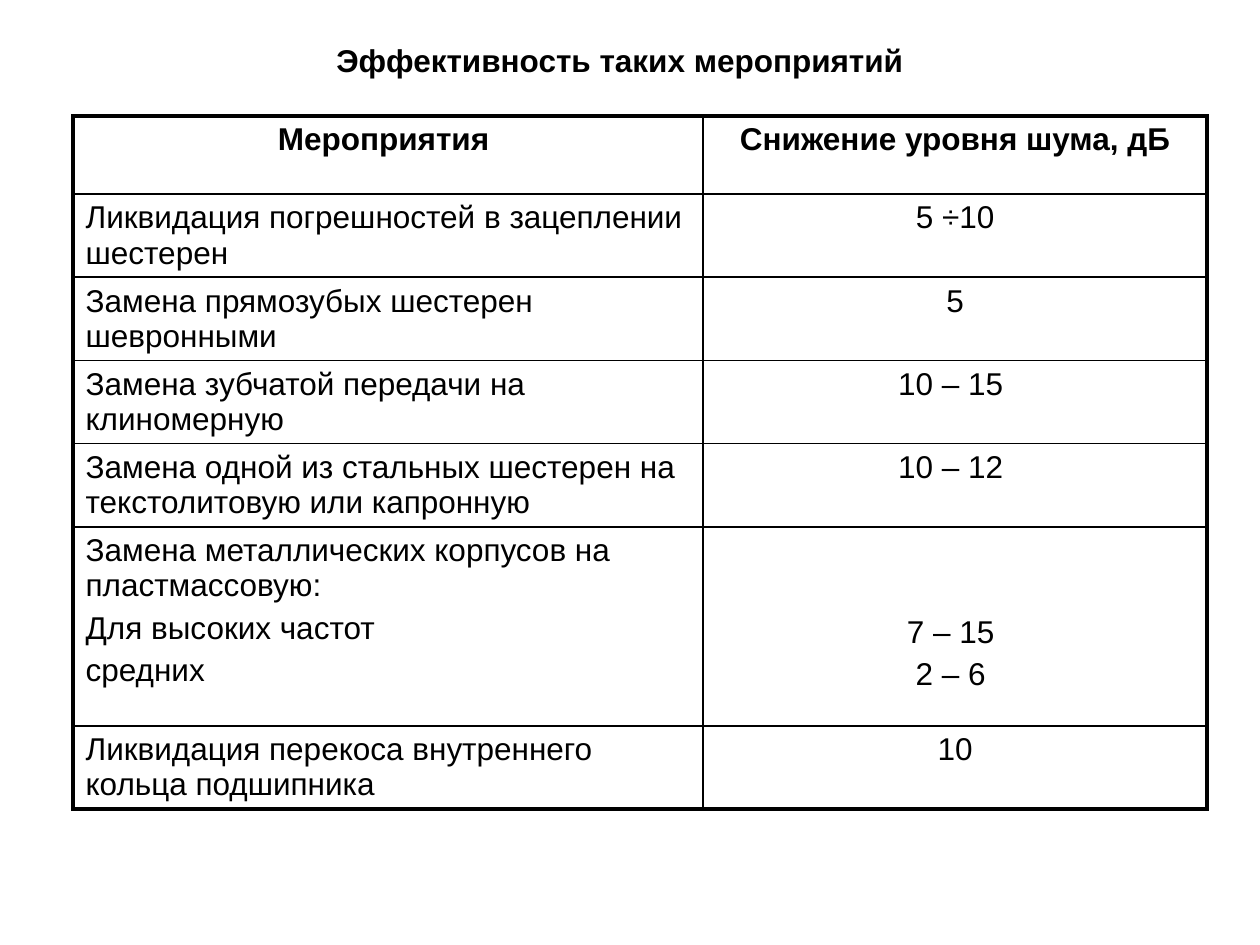
"""Build a slide with a table of noise reduction measures."""
from lxml import etree
from pptx import Presentation
from pptx import util as u
from pptx.dml.color import RGBColor
from pptx.enum import text
from pptx.oxml import ns

BLACK = RGBColor(0, 0, 0)
TITLE = "Эффективность таких мероприятий"
ROWS = [
    (["Мероприятия "], ["Снижение уровня шума, дБ"]),
    (["Ликвидация погрешностей в зацеплении шестерен"], ["5 ÷10"]),
    (["Замена прямозубых шестерен шевронными"], ["5"]),
    (["Замена зубчатой передачи на клиномерную"], ["10 – 15 "]),
    (["Замена одной из стальных шестерен на текстолитовую или капронную"],
     ["10 – 12 "]),
    (["Замена металлических корпусов на пластмассовую:",
      "Для высоких частот", "средних"], ["7 – 15 ", "2 – 6 "]),
    (["Ликвидация перекоса внутреннего кольца подшипника"], ["10"]),
]
WIDTHS = [5, 4]
HEIGHTS = [0.62] + [0.66] * 4 + [1.58, 0.66]
CASES = 5
FONT = {"name": "Arial", "size": u.Pt(18)}
THIN, THICK = 1, 2.25


def style(par, bold, align):
    """Format one paragraph."""
    par.alignment = align
    for key, val in {**FONT, "bold": bold}.items():
        setattr(par.font, key, val)
    par.font.color.rgb = BLACK


def border(cell, sides):
    """Draw the four sides of a cell, given as (tag, width) pairs."""
    props = cell._tc.get_or_add_tcPr()
    for i, (tag, width) in enumerate(sides):
        line = etree.Element(ns.qn(f"a:{tag}"), w=str(u.Pt(width)))
        fill = etree.SubElement(line, ns.qn("a:solidFill"))
        etree.SubElement(fill, ns.qn("a:srgbClr"), val=str(BLACK))
        props.insert(i, line)


def write(cell, lines, bold, align):
    """Put lines of text in a cell."""
    frame = cell.text_frame
    for i, line in enumerate(lines):
        par = frame.add_paragraph() if i else frame.paragraphs[0]
        par.text = line
        style(par, bold, align)
        if i:
            par.space_before = u.Pt(4)


def main():
    """Build and save the slide."""
    deck = Presentation()
    deck.slide_width, deck.slide_height = u.Inches(10), u.Inches(7.5)
    slide = deck.slides.add_slide(deck.slide_layouts[5])

    title = slide.shapes.title
    spot = {"left": 2.42, "top": 0.25, "width": 5, "height": 0.45}
    for key, val in spot.items():
        setattr(title, key, u.Inches(val))
    title.text_frame.text = TITLE
    title.text_frame.vertical_anchor = text.MSO_ANCHOR.MIDDLE
    style(title.text_frame.paragraphs[0], True, text.PP_ALIGN.CENTER)

    box = (0.58, 0.92, sum(WIDTHS), sum(HEIGHTS))
    table = slide.shapes.add_table(
        len(ROWS), len(WIDTHS), *map(u.Inches, box)).table
    table.first_row = table.horz_banding = False
    for col, width in zip(table.columns, WIDTHS):
        col.width = u.Inches(width)
    for row, high in zip(table.rows, HEIGHTS):
        row.height = u.Inches(high)

    last = len(ROWS) - 1
    for r, row in enumerate(ROWS):
        for c, lines in enumerate(row):
            cell = table.cell(r, c)
            mid = r == 0 or c == 1
            write(cell, lines, r == 0,
                  text.PP_ALIGN.CENTER if mid else text.PP_ALIGN.LEFT)
            cell.fill.background()
            edges = {"lnL": c == 0, "lnR": c == 1,
                     "lnT": r == 0, "lnB": r == last}
            border(cell, [(tag, THICK if rim else THIN)
                          for tag, rim in edges.items()])
    table.cell(CASES, 1).margin_top = u.Inches(0.7)
    deck.save("out.pptx")


if __name__ == "__main__":
    main()
